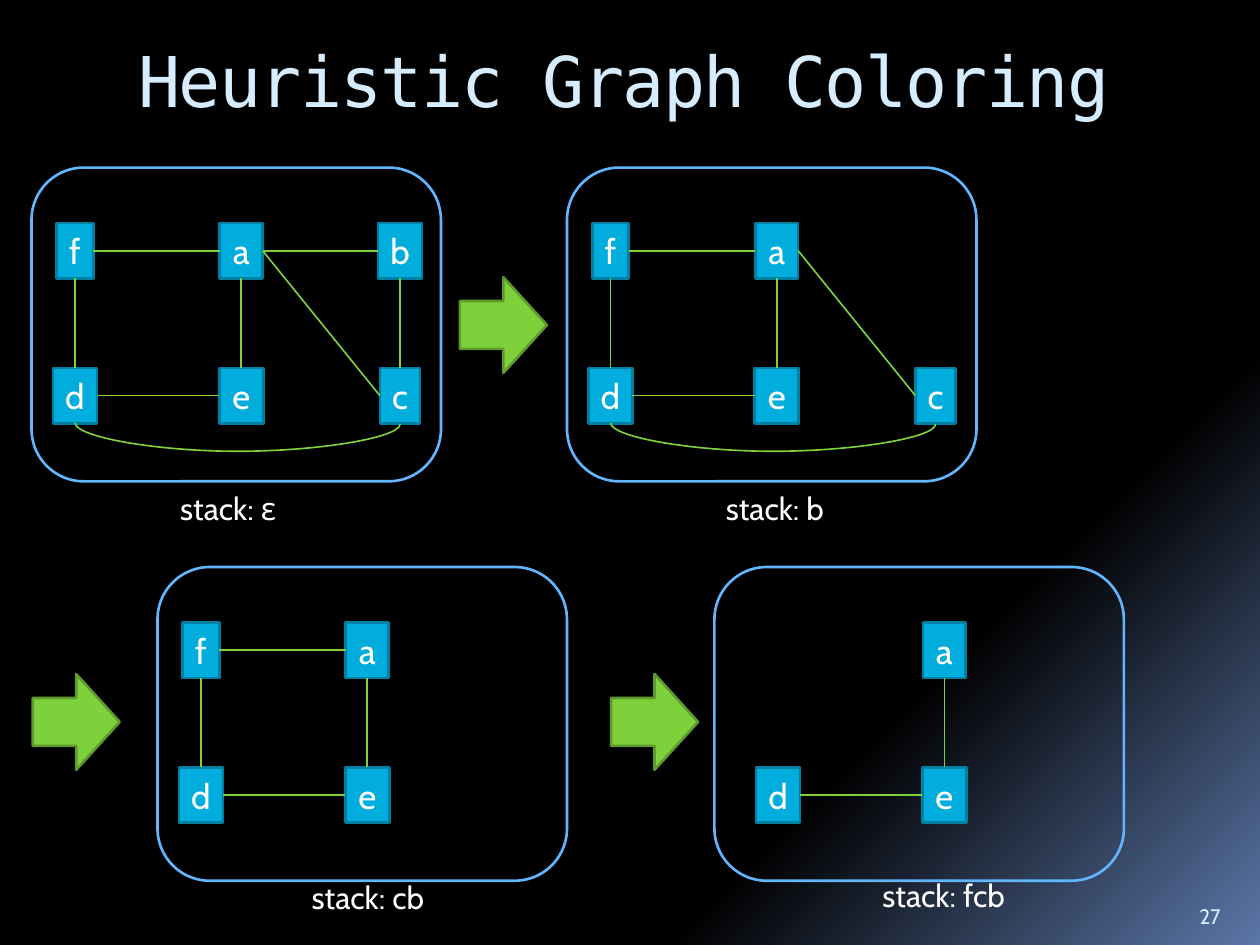
"""Build the slide on heuristic graph colouring: four graph states and their stacks."""
from dataclasses import dataclass

from lxml.etree import SubElement
from pptx import Presentation
from pptx.dml.color import RGBColor
from pptx.enum.shapes import MSO_CONNECTOR, MSO_SHAPE
from pptx.enum.text import MSO_ANCHOR, PP_ALIGN
from pptx.oxml.ns import qn
from pptx.util import Inches, Pt


@dataclass(frozen=True)
class Theme:
    title_font: str = "DejaVu Sans Mono"
    body_font: str = "Cabin"
    title_size: int = 40
    node_size: int = 20
    label_size: int = 18
    number_size: int = 12
    heading: str = "D6ECFF"
    text: str = "FFFFFF"
    dark: str = "000000"
    glow: str = "5B77A8"
    node: str = "00ADDC"
    node_line: str = "0080A3"
    edge: str = "7FD13B"
    arrow_line: str = "5E9B2C"
    panel_line: str = "61B6FF"
    outline: float = 1.5
    edge_width: float = 0.94


THEME = Theme()
TITLE = "Heuristic Graph Coloring"
PAGE_NUMBER = "27"
TOP, LEFT, BOTTOM, RIGHT = range(4)

NODES = {"f": (0, 0, 0.29), "a": (1, 0, 0.34), "b": (2, 0, 0.35),
         "d": (0, 1, 0.35), "e": (1, 1, 0.35), "c": (2, 1, 0.32)}
EDGES = [("f", RIGHT, "a", LEFT), ("a", RIGHT, "b", LEFT),
         ("d", TOP, "f", BOTTOM), ("e", LEFT, "d", RIGHT),
         ("a", BOTTOM, "e", TOP), ("b", BOTTOM, "c", TOP),
         ("a", RIGHT, "c", LEFT)]
STATES = [
    dict(at=(0.25, 1.33), nodes="fabdec", stack="stack: ε", label=(1.56, 2.5, 0.98), shift=0),
    dict(at=(4.5, 1.33), nodes="fadec", stack="stack: b", label=(1.65, 2.5, 1), shift=0),
    dict(at=(1.25, 4.5), nodes="fade", stack="stack: cb", label=(1.67, 2.42, 1.11), shift=0),
    dict(at=(5.67, 4.5), nodes="ade", stack="stack: fcb", label=(1.82, 2.4, 1.24), shift=0.16),
]
ARROWS = [(3.65, 2.2), (0.26, 5.35), (4.85, 5.35)]

PANEL = (3.25, 2.49)
ARROW = (0.69, 0.76)
COLUMNS = (0.345, 1.665, 2.925)
ROWS = (0.44, 1.59)
NODE_HEIGHT = 0.44
ARC_RISE, ARC_SPAN, ARC_DEPTH = 0.01, 2.58, 23


def colour(value):
    return RGBColor.from_string(value)


def write(holder, words, size, tint, font=THEME.body_font, align=PP_ALIGN.CENTER,
          anchor=MSO_ANCHOR.TOP, wrap=False):
    frame = holder.text_frame
    frame.text = words
    frame.word_wrap = wrap
    frame.vertical_anchor = anchor
    paragraph = frame.paragraphs[0]
    paragraph.alignment = align
    paragraph.font.name = font
    paragraph.font.size = Pt(size)
    paragraph.font.color.rgb = colour(tint)
    return paragraph


def add_block(slide, preset, box, line, fill=None):
    block = slide.shapes.add_shape(preset, *map(Inches, box))
    block.shadow.inherit = False
    if fill:
        block.fill.solid()
        block.fill.fore_color.rgb = colour(fill)
    else:
        block.fill.background()
    block.line.color.rgb = colour(line)
    block.line.width = Pt(THEME.outline)
    return block


def add_edge(slide, kind, *ends):
    edge = slide.shapes.add_connector(kind, *map(Inches, ends))
    edge.line.color.rgb = colour(THEME.edge)
    edge.line.width = Pt(THEME.edge_width)
    SubElement(edge._element.spPr, qn("a:effectLst"))
    return edge


def add_arc(slide, middle, top):
    left, upper = middle - ARC_RISE / 2, top - ARC_SPAN / 2
    arc = add_edge(slide, MSO_CONNECTOR.CURVE, left + ARC_RISE, upper, left, upper + ARC_SPAN)
    properties = arc._element.spPr
    properties.find(qn("a:xfrm")).set("rot", str(270 * 60000))
    adjustments = properties.find(qn("a:prstGeom")).get_or_add_avLst()
    SubElement(adjustments, qn("a:gd"), name="adj1", fmla=f"val {ARC_DEPTH * 100000}")


def add_state(slide, state):
    x, y = state["at"]
    add_block(slide, MSO_SHAPE.ROUNDED_RECTANGLE, (x, y, *PANEL), THEME.panel_line)
    placed = {}
    for name in state["nodes"]:
        column, row, width = NODES[name]
        box = (x + state["shift"] + COLUMNS[column] - width / 2, y + ROWS[row], width, NODE_HEIGHT)
        placed[name] = add_block(slide, MSO_SHAPE.RECTANGLE, box, THEME.node_line, THEME.node)
        write(placed[name], name, THEME.node_size, THEME.text, anchor=MSO_ANCHOR.MIDDLE)
    for start, start_side, end, end_side in EDGES:
        if start in placed and end in placed:
            edge = add_edge(slide, MSO_CONNECTOR.STRAIGHT, 0, 0, 0, 0)
            edge.begin_connect(placed[start], start_side)
            edge.end_connect(placed[end], end_side)
    if "c" in placed and "d" in placed:
        add_arc(slide, x + (COLUMNS[0] + COLUMNS[2]) / 2, y + ROWS[1] + NODE_HEIGHT)
    middle, drop, width = state["label"]
    label = slide.shapes.add_textbox(*map(Inches, (x + middle - width / 2, y + drop, width, 0.4)))
    write(label, state["stack"], THEME.label_size, THEME.text)


def paint_background(slide):
    fill = slide.background.fill
    fill.gradient()
    fill.gradient_angle = 315
    for stop, position, tint in zip(fill.gradient_stops, (0.73, 1), (THEME.dark, THEME.glow)):
        stop.position = position
        stop.color.rgb = colour(tint)


def main():
    deck = Presentation()
    deck.slide_width, deck.slide_height = Inches(10), Inches(7.5)
    slide = deck.slides.add_slide(deck.slide_layouts[5])
    paint_background(slide)

    title = slide.shapes.title
    title.left, title.top, title.width, title.height = map(Inches, (1, 0.25, 8.5, 1))
    heading = write(title, TITLE, THEME.title_size, THEME.heading, THEME.title_font,
                    PP_ALIGN.LEFT, wrap=True)
    heading.runs[0].font._element.set("spc", "-100")

    for state in STATES:
        add_state(slide, state)
    for place in ARROWS:
        add_block(slide, MSO_SHAPE.RIGHT_ARROW, (*place, *ARROW), THEME.arrow_line, THEME.edge)

    number = slide.shapes.add_textbox(*map(Inches, (9.42, 7.02, 0.5, 0.4)))
    write(number, PAGE_NUMBER, THEME.number_size, THEME.heading, align=PP_ALIGN.LEFT,
          anchor=MSO_ANCHOR.BOTTOM, wrap=True)
    deck.save("out.pptx")


if __name__ == "__main__":
    main()
